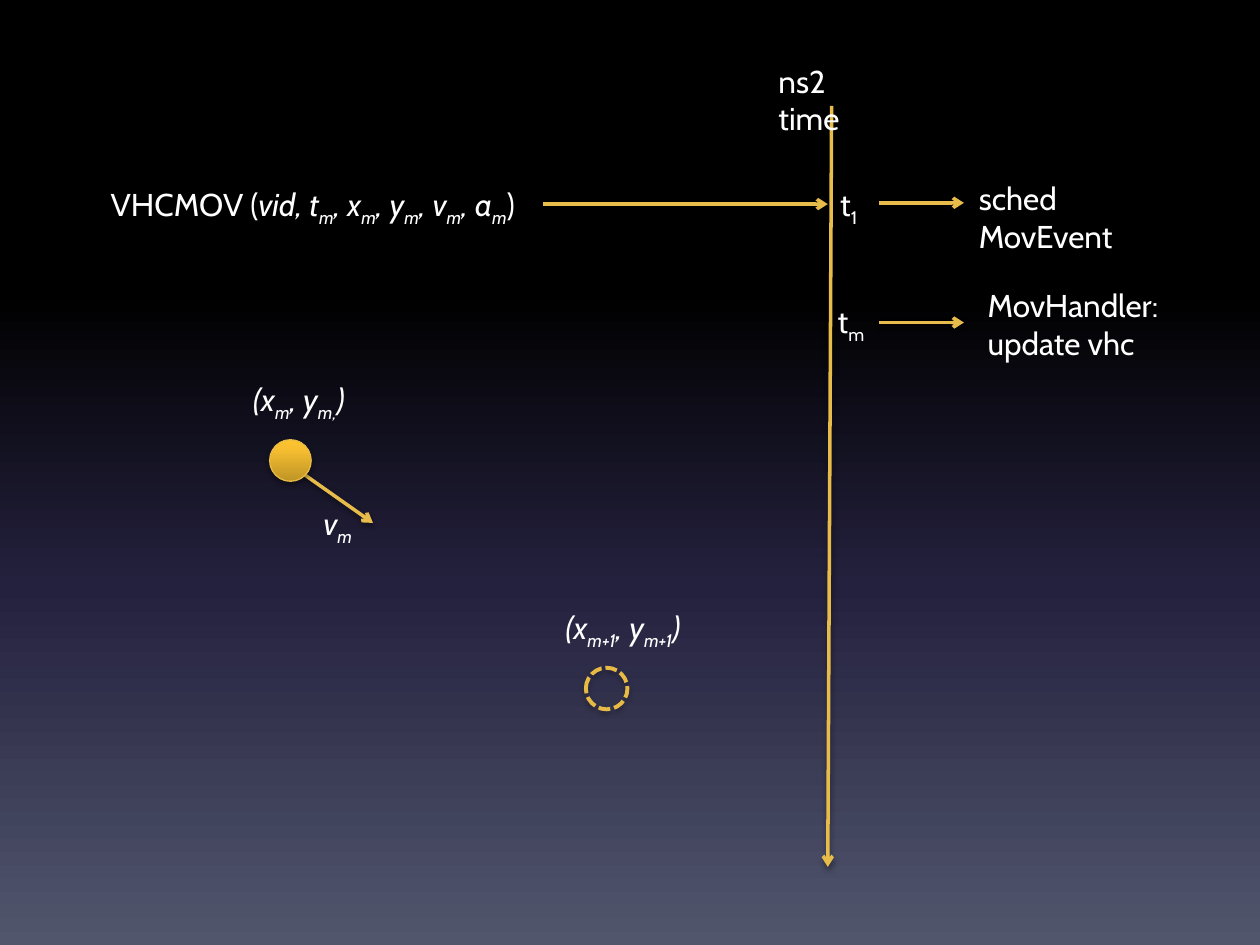
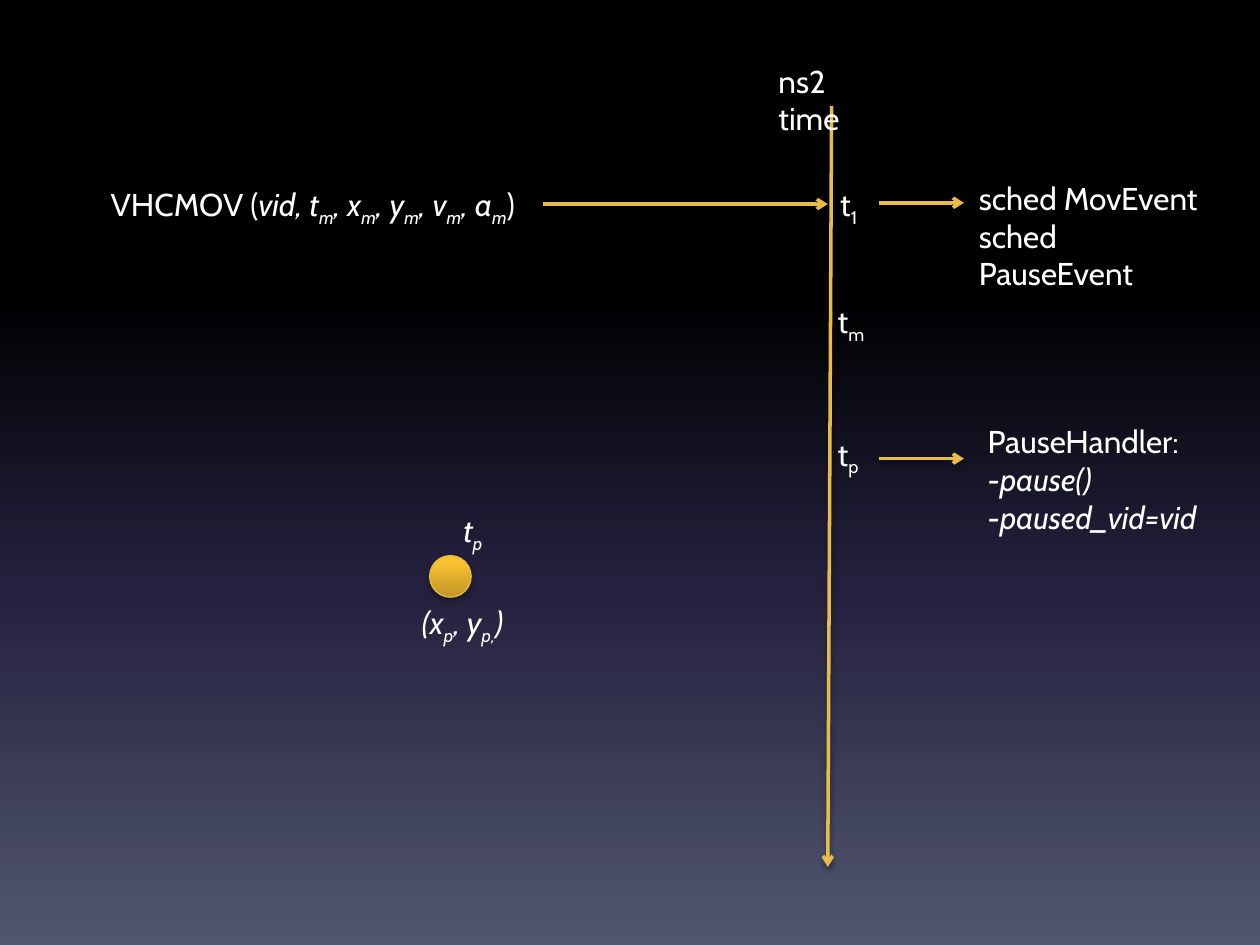
from lxml import etree
from pptx import Presentation
from pptx import util as u
from pptx.dml.color import RGBColor
from pptx.enum import dml, shapes, text
from pptx.oxml.ns import qn

PX = 9144
FONT = "Cabin"
WHITE, LINE, RIM, BLACK = "FFFFFF", "E8BC4A", "E7BA45", "000000"
SKY = [(0, BLACK), (31, BLACK), (62, "24213E"), (100, "51566D")]
GOLD = [(0, "BF9426"), (80, "F8C031"), (100, "FDC32D")]
DOT = 33
AXIS_TOP, AXIS_END = (660, 84), (657, 688)
CALL = "VHCMOV (*vid, t~m~, x~m~, y~m~, v~m~, a~m~*)"


def px(n):
    """Turn px (100 to the inch) into EMU."""
    return u.Emu(n * PX)


def rgb(color):
    """Turn a hex string into a colour."""
    return RGBColor.from_string(color)


def add_color(parent, color, alpha=100):
    """Append a colour with an opacity in percent."""
    clr = etree.SubElement(parent, qn("a:srgbClr"), val=color)
    if alpha < 100:
        etree.SubElement(clr, qn("a:alpha"), val=str(alpha * 1000))


def set_gradient(fill, owner, stops, angle):
    """Fill the owner with a linear gradient, its angle counter-clockwise."""
    fill.gradient()
    fill.gradient_angle = angle
    gs_list = owner.find(".//" + qn("a:gsLst"))
    for gs in list(gs_list):
        gs_list.remove(gs)
    for percent, color in stops:
        gs = etree.SubElement(gs_list, qn("a:gs"), pos=str(percent * 1000))
        add_color(gs, color)


def add_shadow(sp, alpha, dist):
    """Give a shape or connector a soft shadow straight below it."""
    effects = etree.SubElement(sp.element.spPr, qn("a:effectLst"))
    shadow = etree.SubElement(effects, qn("a:outerShdw"), blurRad="40000",
                              dist=str(dist), dir="5400000", rotWithShape="0")
    add_color(shadow, BLACK, alpha)


def add_arrow(s, start, end):
    """Draw an arrow between two points."""
    c = s.shapes.add_connector(shapes.MSO_CONNECTOR.STRAIGHT,
                               *map(px, start + end))
    c.line.color.rgb = rgb(LINE)
    c.line.width = u.Pt(2)
    ln = c.element.spPr.find(qn("a:ln"))
    etree.SubElement(ln, qn("a:tailEnd"), type="arrow")
    add_shadow(c, 38, 20000)


def add_vehicle(s, x, y, planned=False):
    """Draw a vehicle as a gold dot, or as a dashed ring when planned."""
    sp = s.shapes.add_shape(shapes.MSO_SHAPE.OVAL, *map(px, (x, y, DOT, DOT)))
    sp.line.color.rgb = rgb(RIM)
    if planned:
        sp.fill.background()
        sp.line.width = u.Pt(2.25)
        sp.line.dash_style = dml.MSO_LINE.SQUARE_DOT
    else:
        set_gradient(sp.fill, sp.element.spPr, GOLD, 90)
        sp.line.width = u.Pt(0.75)
    add_shadow(sp, 35, 23000)


def add_label(s, x, y, w, *lines):
    """Write lines of text where * toggles italics and ~ toggles subscript."""
    height = 40 + 30 * (len(lines) - 1)
    tf = s.shapes.add_textbox(*map(px, (x, y, w, height))).text_frame
    tf.word_wrap = True
    tf.auto_size = text.MSO_AUTO_SIZE.SHAPE_TO_FIT_TEXT
    for n, line in enumerate(lines):
        p = tf.add_paragraph() if n else tf.paragraphs[0]
        for i, styled in enumerate(line.split("*")):
            for j, part in enumerate(styled.split("~")):
                if part:
                    add_run(p, part, i % 2 == 1, j % 2 == 1)


def add_run(p, words, italic, subscript):
    """Add one formatted run."""
    r = p.add_run()
    r.text = words
    r.font.size = u.Pt(18)
    r.font.name = FONT
    r.font.color.rgb = rgb(WHITE)
    if italic:
        r.font.italic = True
    if subscript:
        r.font._element.set("baseline", "-25000")


def add_step(s, y, x, w, text_y, *lines):
    """Point from the time axis to what happens at that moment."""
    add_arrow(s, (698, y), (765, y))
    add_label(s, x, text_y, w, *lines)


def add_timeline(prs):
    """Start a slide with the call, the time axis and its first two moments."""
    s = prs.slides.add_slide(prs.slide_layouts[6])
    add_label(s, 78, 142, 353, CALL)
    add_arrow(s, (431, 162), (657, 162))
    add_arrow(s, AXIS_TOP, AXIS_END)
    add_label(s, 608, 44, 108, "ns2 time")
    add_label(s, 657, 142, 37, "t~1~")
    add_label(s, 655, 235, 43, "t~m~")
    return s


def add_move_slide(prs):
    """Show a vehicle that moves towards its next position."""
    s = add_timeline(prs)
    add_arrow(s, (242, 377), (296, 415))
    add_vehicle(s, 214, 349)
    add_vehicle(s, 465, 530, planned=True)
    add_label(s, 247, 395, 50, "*v~m~")
    add_label(s, 191, 297, 108, "*(x~m~, y~m,~)")
    add_label(s, 439, 478, 136, "*(x~m+1~, y~m+1~)")
    add_step(s, 161, 767, 190, 137, "sched MovEvent")
    add_step(s, 256, 774, 156, 222, "MovHandler:", "update vhc")


def add_pause_slide(prs):
    """Show a vehicle that pauses on its way."""
    s = add_timeline(prs)
    add_vehicle(s, 341, 441)
    add_label(s, 325, 474, 98, "*(x~p~, y~p,~)")
    add_label(s, 358, 401, 42, "*t~p~")
    add_label(s, 655, 340, 38, "t~p~")
    add_step(s, 161, 767, 205, 137, "sched MovEvent", "sched PauseEvent")
    add_step(s, 364, 774, 193, 330,
             "PauseHandler:", "*-pause()", "*-paused_vid=vid")


def main():
    """Build the two slides."""
    prs = Presentation()
    prs.slide_width, prs.slide_height = px(1000), px(750)
    master = prs.slide_master
    set_gradient(master.background.fill, master.element, SKY, 270)
    add_move_slide(prs)
    add_pause_slide(prs)
    prs.save("out.pptx")


if __name__ == "__main__":
    main()
